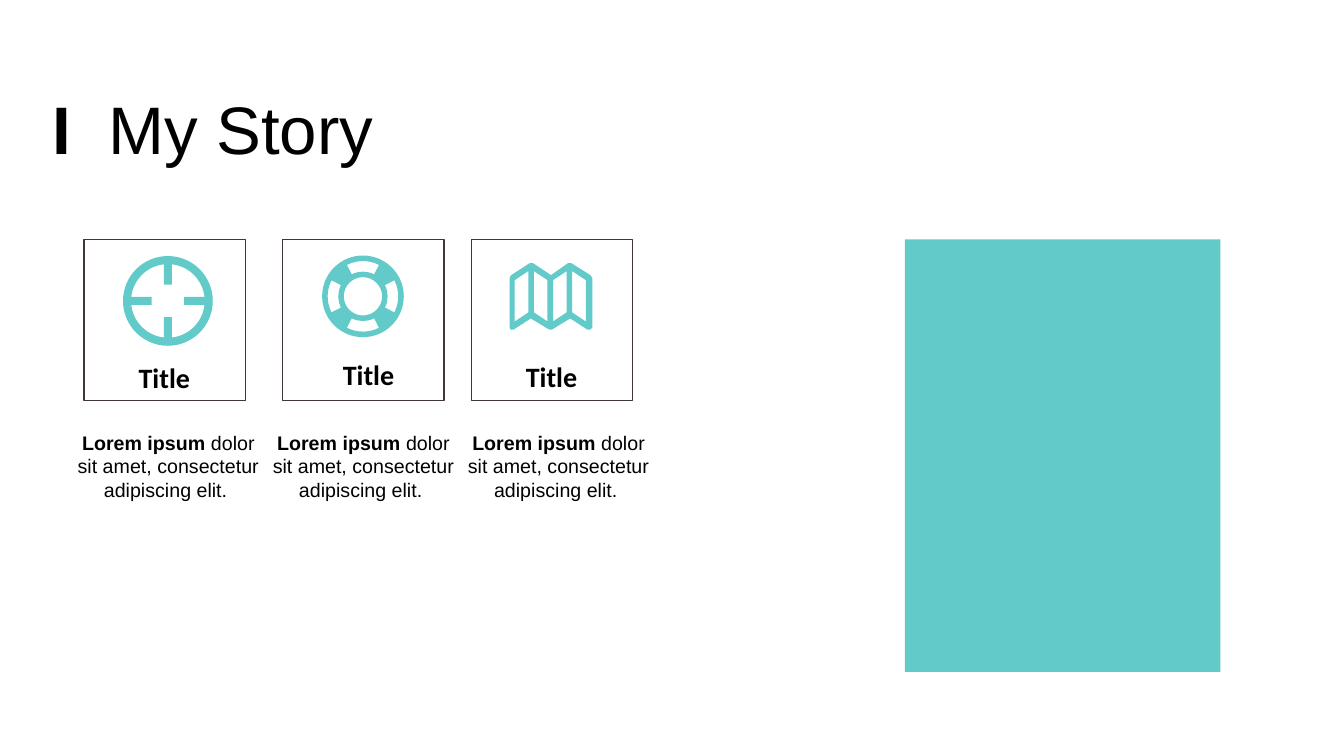
import dataclasses
import math

import lxml.etree
import pptx
import pptx.dml.color
import pptx.enum.shapes
import pptx.enum.text
import pptx.oxml
import pptx.oxml.ns
import pptx.util

PX = 4572


@dataclasses.dataclass(frozen=True)
class Theme:
    teal: str = "62CAC9"
    edge: str = "3F353B"
    ink: str = "000000"
    sans: str = "Arial"
    label: str = "Calibri"
    head: int = 48
    title: int = 20
    body: int = 14


class Deck:
    """Draw styled elements on the current slide."""

    def __init__(self, theme):
        self.theme = theme
        self.file = pptx.Presentation()
        self.file.slide_width, self.file.slide_height = 2666 * PX, 1500 * PX
        self.slide = self.file.slides.add_slide(self.file.slide_layouts[6])

    def color(self, code):
        return pptx.dml.color.RGBColor.from_string(code)

    def paint(self, shape, fill=None, line=None):
        shape.shadow.inherit = False
        if fill:
            shape.fill.solid()
            shape.fill.fore_color.rgb = self.color(fill)
        else:
            shape.fill.background()
        if line:
            shape.line.color.rgb = self.color(line)
            shape.line.width = pptx.util.Pt(1)
        else:
            shape.line.fill.background()

    def rect(self, box, fill=None, line=None):
        kind = pptx.enum.shapes.MSO_SHAPE.RECTANGLE
        shape = self.slide.shapes.add_shape(kind, *(n * PX for n in box))
        self.paint(shape, fill, line)

    def icon(self, loops):
        scaled = [[(x * PX, y * PX) for x, y in loop] for loop in loops]
        pen = self.slide.shapes.build_freeform(*scaled[0][0], scale=1.0)
        pen.add_line_segments(scaled[0][1:], close=True)
        for loop in scaled[1:]:
            pen.move_to(*loop[0])
            pen.add_line_segments(loop[1:], close=True)
        shape = pen.convert_to_shape()
        self.curve(shape)
        self.paint(shape, self.theme.teal)

    def curve(self, shape):
        name = pptx.oxml.ns.qn
        lines = list(shape._element.iter(name("a:lnTo")))
        for i in range(0, len(lines), 3):
            bezier = lxml.etree.Element(name("a:cubicBezTo"))
            lines[i].addprevious(bezier)
            for line in lines[i:i + 3]:
                bezier.append(line[0])
                line.getparent().remove(line)

    def text(self, box, runs, size, font, center=True, lead=None, tab=None):
        frame = self.slide.shapes.add_textbox(*(n * PX for n in box)).text_frame
        frame.word_wrap = True
        frame.auto_size = pptx.enum.text.MSO_AUTO_SIZE.SHAPE_TO_FIT_TEXT
        para = frame.paragraphs[0]
        if center:
            para.alignment = pptx.enum.text.PP_ALIGN.CENTER
        if lead:
            para.line_spacing = pptx.util.Pt(lead)
        if tab:
            space = pptx.oxml.ns.nsdecls("a")
            stops = f'<a:tabLst {space}><a:tab pos="{tab * PX}" algn="l"/></a:tabLst>'
            para._p.get_or_add_pPr().append(pptx.oxml.parse_xml(stops))
        para.font.name, para.font.size = font, pptx.util.Pt(size)
        para.font.color.rgb = self.color(self.theme.ink)
        for words, bold in runs:
            run = para.add_run()
            run.text, run.font.bold = words, bold


def spot(mid, radius, angle):
    turn = math.radians(angle)
    return mid[0] + radius * math.cos(turn), mid[1] + radius * math.sin(turn)


def bend(mid, radius, start, end):
    pull = 4 / 3 * math.tan(math.radians(end - start) / 4)
    (x, y), (u, v) = spot(mid, radius, start), spot(mid, radius, end)
    return [(x - pull * (y - mid[1]), y + pull * (x - mid[0])),
            (u + pull * (v - mid[1]), v - pull * (u - mid[0])), (u, v)]


def ring(mid, radius):
    loop = [spot(mid, radius, 0)]
    for turn in range(0, 360, 90):
        loop += bend(mid, radius, turn, turn + 90)
    return loop


def straight(points):
    return [point for point in points for _ in range(3)]


def target(mid):
    inner = [spot(mid, 73, 6.2)]
    for turn in range(0, 360, 90):
        inner += bend(mid, 73, turn + 6.2, turn + 83.8)
        tips = [spot(mid, 33, turn + 90 + side) for side in (-14, 14)]
        inner += straight(tips + [spot(mid, 73, turn + 96.2)])
    return [ring(mid, 89), inner]


def buoy(mid):
    loops = [ring(mid, 81), ring(mid, 38)]
    for turn in range(0, 360, 90):
        a, b = turn - 27, turn + 27
        loops.append([spot(mid, 70, a)] + bend(mid, 70, a, b)
                     + straight([spot(mid, 49, b)]) + bend(mid, 49, b, a))
    return loops


def chart(x, y):
    loops = [[(0, 30), (3, 24), (40, 0), (46, 0), (82, 24), (116, 0), (122, 0),
              (160, 24), (164, 30), (164, 128), (160, 132), (154, 132), (120, 110),
              (84, 132), (78, 132), (42, 110), (8, 132), (2, 132), (0, 128)]]
    for i in range(4):
        left, right = (34, 16) if i % 2 == 0 else (16, 34)
        a, b = 10 + 38 * i, 37 + 38 * i
        loops.append([(a, left), (b, right), (b, right + 82), (a, left + 82)])
    moved = [[(x + u, y + v) for u, v in loop] for loop in loops]
    return [loop[:1] + straight(loop[1:]) for loop in moved]


def main():
    theme = Theme()
    deck = Deck(theme)
    deck.rect((1795, 475, 626, 858), fill=theme.teal)
    deck.text((84, 212, 942, 134), [("I\t", True), ("My Story", False)],
              theme.head, theme.sans, center=False, lead=40, tab=111)
    cards = [(167, 184, 705, 120, target((333, 597))),
             (561, 589, 699, 507, buoy((720, 588))),
             (935, 952, 703, 894, chart(1011, 522))]
    for left, name, top, note, loops in cards:
        deck.rect((left, 475, 320, 320), line=theme.edge)
        deck.icon(loops)
        deck.text((name, top, 284, 88), [("Title", True)], theme.title, theme.label)
        deck.text((note, 845, 428, 162),
                  [("Lorem ipsum ", True), ("dolor sit amet, consectetur adipiscing elit. ", False)],
                  theme.body, theme.sans)
    deck.file.save("out.pptx")


if __name__ == "__main__":
    main()
